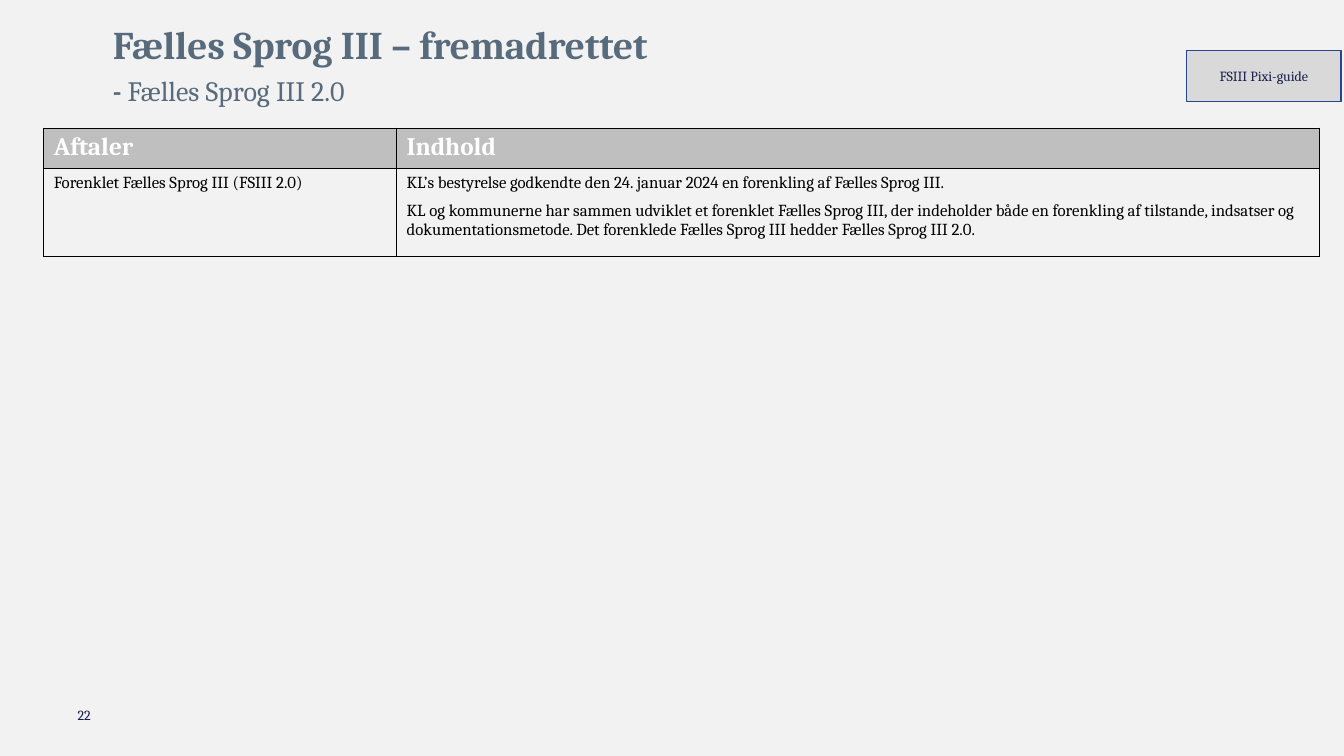
from lxml import etree
from pptx import Presentation
from pptx.dml.color import RGBColor
from pptx.enum import shapes, text
from pptx.oxml import ns
from pptx.util import Pt

COLORS = {
    "background": "F2F2F2", "header": "BFBFBF", "badge": "D9D9D9",
    "badge_line": "2A438F", "navy": "141E4D", "title": "576B7C",
    "white": "FFFFFF", "black": "000000",
}
FONT = "Cambria"


def style(run, size, color, bold=False):
    run.font.name = FONT
    run.font.size = Pt(size)
    run.font.bold = bold
    run.font.color.rgb = RGBColor.from_string(COLORS[color])


def add_border(cell):
    """Draw a 1 pt black line on all four sides of a table cell."""
    properties = cell._tc.get_or_add_tcPr()
    for position, side in enumerate(("lnL", "lnR", "lnT", "lnB")):
        line = etree.Element(ns.qn(f"a:{side}"), w=str(Pt(1)))
        fill = etree.SubElement(line, ns.qn("a:solidFill"))
        etree.SubElement(fill, ns.qn("a:srgbClr"), val=COLORS["black"])
        properties.insert(position, line)


deck = Presentation()
deck.slide_width, deck.slide_height = Pt(960), Pt(540)
slide = deck.slides.add_slide(deck.slide_layouts[6])
slide.background.fill.solid()
slide.background.fill.fore_color.rgb = RGBColor.from_string(COLORS["background"])

# Slide number and title
number = slide.shapes.add_textbox(Pt(55.4), Pt(496), Pt(216), Pt(29)).text_frame
title = slide.shapes.add_textbox(Pt(80.6), Pt(31), Pt(560), Pt(55.4)).text_frame
for frame in (number, title):
    frame.word_wrap = True
    frame.vertical_anchor = text.MSO_ANCHOR.MIDDLE
    frame.margin_left = frame.margin_right = frame.margin_top = frame.margin_bottom = 0

number.text = "22"
style(number.paragraphs[0].runs[0], 10, "navy")

title.margin_bottom = Pt(22)
title.text = "Fælles Sprog III – fremadrettet"
style(title.paragraphs[0].runs[0], 28, "title", bold=True)
subtitle = title.add_paragraph()
subtitle.space_before = Pt(7)
for part, bold in (("- ", True), ("Fælles Sprog III 2.0", False)):
    run = subtitle.add_run()
    run.text = part
    style(run, 20, "title", bold)
for paragraph in title.paragraphs:
    paragraph.line_spacing = 0.9

# Agreements table
rows = [
    ("Aftaler", "Indhold"),
    ("Forenklet Fælles Sprog III (FSIII 2.0)",
     "KL’s bestyrelse godkendte den 24. januar 2024 en forenkling af Fælles Sprog III.\n"
     "KL og kommunerne har sammen udviklet et forenklet Fælles Sprog III, der indeholder "
     "både en forenkling af tilstande, indsatser og dokumentationsmetode. "
     "Det forenklede Fælles Sprog III hedder Fælles Sprog III 2.0."),
]
agreements = slide.shapes.add_table(2, 2, Pt(31.3), Pt(91.5), Pt(911.5), Pt(90.5)).table
agreements.first_row = agreements.horz_banding = False
for column, width in zip(agreements.columns, (252, 659.5)):
    column.width = Pt(width)
for row, height in zip(agreements.rows, (27.5, 63)):
    row.height = Pt(height)

for row_index, contents in enumerate(rows):
    is_header = row_index == 0
    for column_index, content in enumerate(contents):
        cell = agreements.cell(row_index, column_index)
        cell.text_frame.text = content
        cell.fill.solid()
        fill = "header" if is_header else "background"
        cell.fill.fore_color.rgb = RGBColor.from_string(COLORS[fill])
        add_border(cell)
        for paragraph in cell.text_frame.paragraphs:
            if not is_header and column_index == 1:
                paragraph.space_after = Pt(6)
            style(paragraph.runs[0], 18 if is_header else 12,
                  "white" if is_header else "black", is_header)

# Guide badge
badge = slide.shapes.add_shape(
    shapes.MSO_SHAPE.RECTANGLE, Pt(847.5), Pt(36), Pt(110.5), Pt(36.5))
badge.shadow.inherit = False
badge.fill.solid()
badge.fill.fore_color.rgb = RGBColor.from_string(COLORS["badge"])
badge.line.color.rgb = RGBColor.from_string(COLORS["badge_line"])
badge.line.width = Pt(1)
badge.text_frame.text = "FSIII Pixi-guide"
badge.text_frame.vertical_anchor = text.MSO_ANCHOR.MIDDLE
badge_label = badge.text_frame.paragraphs[0]
badge_label.alignment = text.PP_ALIGN.CENTER
style(badge_label.runs[0], 10, "navy")

deck.save("out.pptx")
